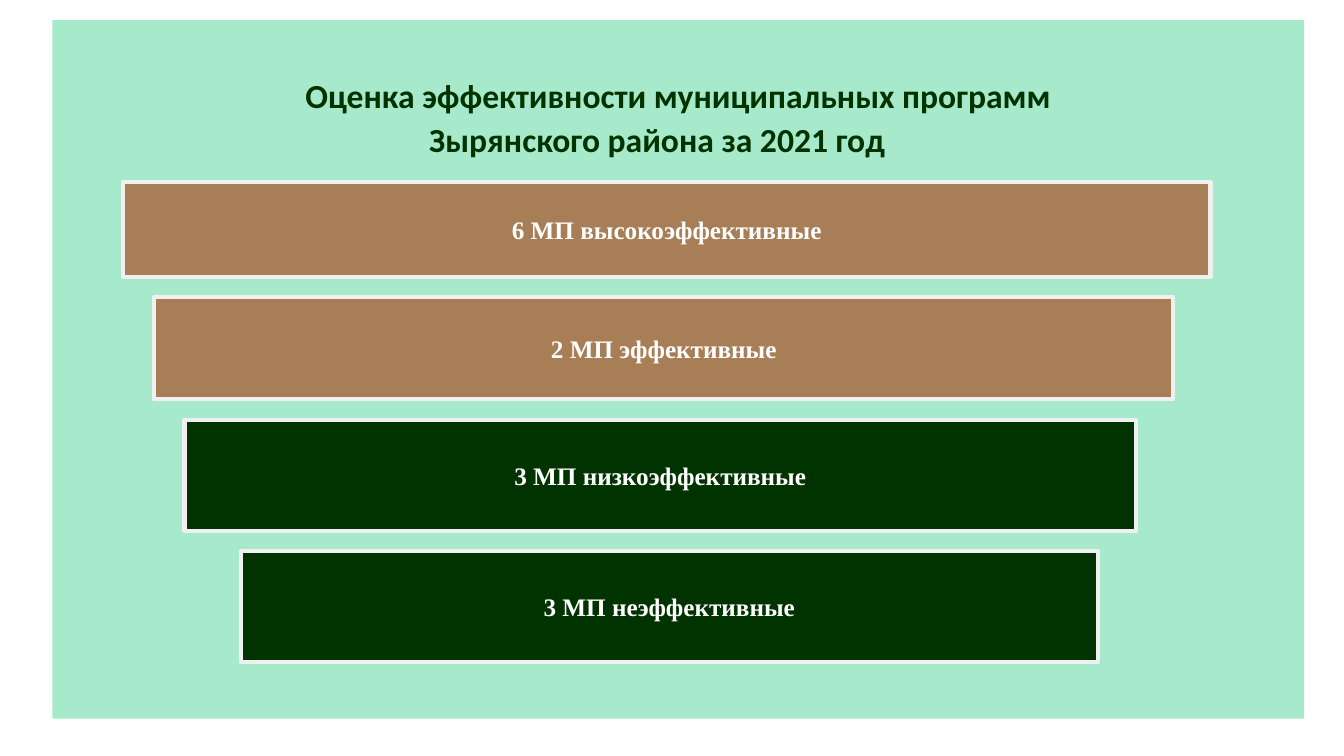
from pptx import Presentation
from pptx import util as u
from pptx.dml.color import RGBColor
from pptx.enum import shapes, text

Pt = u.Pt
COLORS = {"mint": "A7EACB", "brown": "A77E56", "green": "003300",
          "frame": "F1F0F0", "white": "FFFFFF"}
TITLE = ["Оценка эффективности муниципальных программ",
         "Зырянского района за 2021 год"]
BARS = [  # label, fill, left, top, width, height
    ("6 МП высокоэффективные", "brown", 87.8, 130.3, 776.9, 67.7),
    ("2 МП эффективные", "brown", 110.2, 212.4, 727.9, 72.7),
    ("3 МП низкоэффективные", "green", 131.8, 300.2, 679.7, 79.2),
    ("3 МП неэффективные", "green", 172.1, 393.8, 612, 79.2),
]


def color(name):
    return RGBColor.from_string(COLORS[name])


def style(para, face, size, tint):
    para.alignment = text.PP_ALIGN.CENTER
    font = para.font
    font.name, font.size, font.bold = face, Pt(size), True
    font.color.rgb = color(tint)


def add_rect(slide, fill, *place):
    rect = slide.shapes.add_shape(shapes.MSO_SHAPE.RECTANGLE, *map(Pt, place))
    rect.shadow.inherit = False
    rect.fill.solid()
    rect.fill.fore_color.rgb = color(fill)
    rect.line.fill.background()
    return rect


def add_bar(slide, label, fill, *place):
    bar = add_rect(slide, fill, *place)
    bar.line.color.rgb = color("frame")
    bar.line.width = Pt(3)
    frame = bar.text_frame
    frame.word_wrap = True
    frame.vertical_anchor = text.MSO_ANCHOR.MIDDLE
    para = frame.paragraphs[0]
    para.text = label
    style(para, "Times New Roman", 18, "white")


def add_title(slide, lines):
    """Centre the lines, with the first one shifted right by an indent."""
    box = slide.shapes.add_textbox(Pt(22.3), Pt(53), Pt(894.2), Pt(66))
    frame = box.text_frame
    frame.word_wrap = True
    frame.text = "\n".join(lines)
    first, second = frame.paragraphs
    for para in (first, second):
        para.line_spacing = 0.9
        style(para, "Calibri", 24, "green")
    first._p.get_or_add_pPr().set("marL", str(Pt(30)))
    second.space_before = Pt(5.8)


def main():
    deck = Presentation()
    deck.slide_width, deck.slide_height = Pt(960), Pt(540)
    slide = deck.slides.add_slide(deck.slide_layouts[6])
    add_rect(slide, "mint", 37.4, 14.4, 894.2, 499)
    add_title(slide, TITLE)
    for bar in BARS:
        add_bar(slide, *bar)
    deck.save("out.pptx")


if __name__ == "__main__":
    main()
